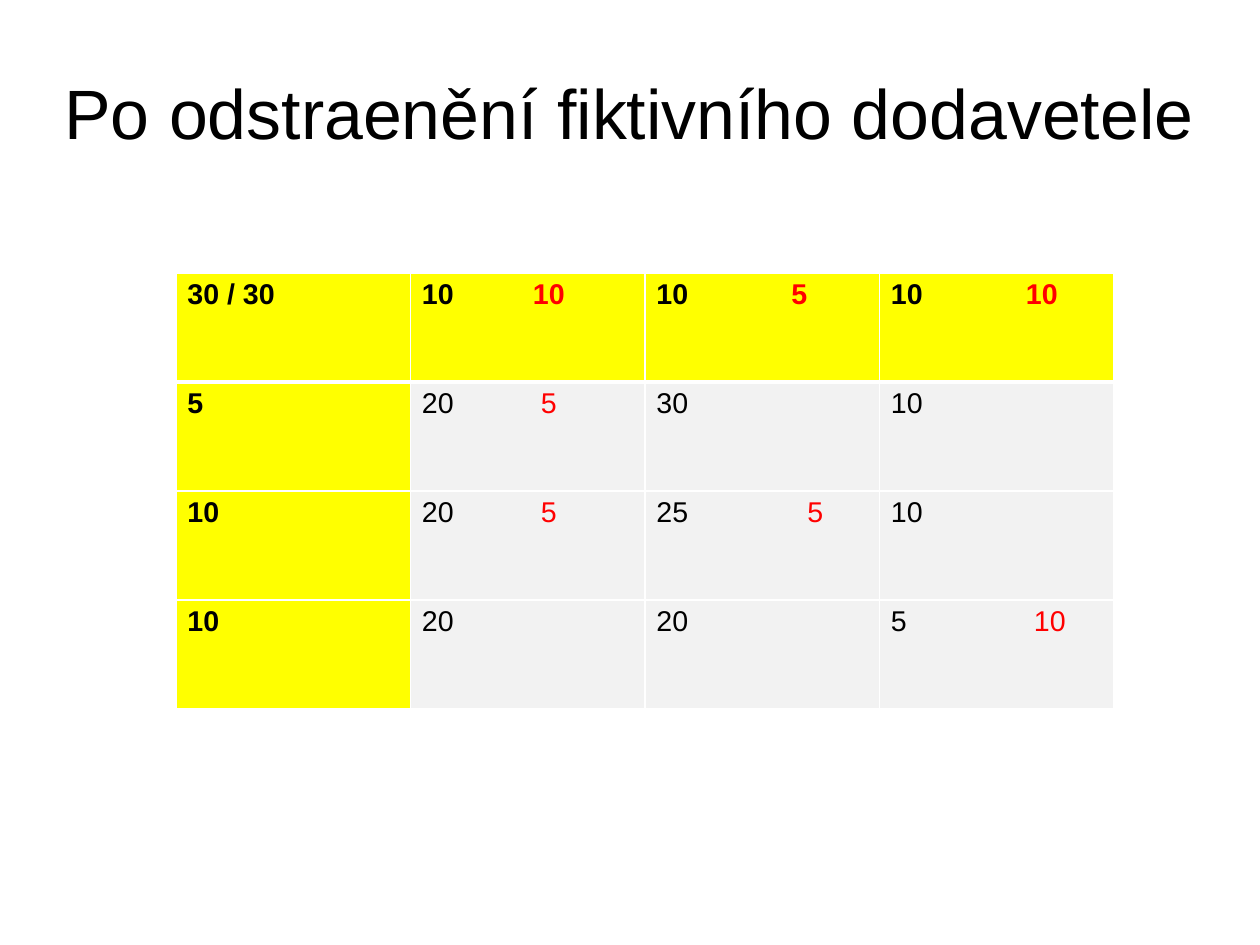
from lxml.etree import SubElement
from pptx import Presentation
from pptx.dml.color import RGBColor
from pptx.enum.text import MSO_ANCHOR, PP_ALIGN
from pptx.oxml.ns import qn
from pptx.util import Pt

PX = 8000
COLORS = {"black": "000000", "red": "FF0000", "yellow": "FFFF00",
          "gray": "F2F2F2", "white": "FFFFFF"}
ROWS = [
    [("30 / 30",), ("10", "10", 111), ("10", "5", 135), ("10", "10", 135)],
    [("5",), ("20", "5", 119), ("30",), ("10",)],
    [("10",), ("20", "5", 119), ("25", "5", 151), ("10",)],
    [("10",), ("20",), ("20",), ("5", "10", 143)],
]


def px(n):
    """Convert pixels to EMU."""
    return int(n * PX)


def add_text(p, text, size=18, color="black", bold=False):
    """Append a formatted run to a paragraph."""
    r = p.add_run()
    r.text = text
    r.font.name = "Arial"
    r.font.size = Pt(size)
    r.font.bold = bold
    r.font.color.rgb = RGBColor.from_string(COLORS[color])


def add_tab_stop(p, pos):
    """Set one left tab stop on a paragraph."""
    tabs = SubElement(p._p.get_or_add_pPr(), qn("a:tabLst"))
    SubElement(tabs, qn("a:tab"), pos=str(px(pos)), algn="l")


def add_borders(cell, top, bottom):
    """Give a cell white borders, widths in points."""
    tcPr = cell._tc.get_or_add_tcPr()
    for side, width in (("L", 1), ("R", 1), ("T", top), ("B", bottom)):
        ln = SubElement(tcPr, qn(f"a:ln{side}"), w=str(Pt(width)))
        fill = SubElement(ln, qn("a:solidFill"))
        SubElement(fill, qn("a:srgbClr"), val=COLORS["white"])


def add_title(slide, x, y, w, h):
    """Place the centred title in its box."""
    tf = slide.shapes.add_textbox(px(x), px(y), px(w), px(h)).text_frame
    tf.word_wrap = True
    tf.vertical_anchor = MSO_ANCHOR.MIDDLE
    tf.margin_left = tf.margin_right = tf.margin_top = tf.margin_bottom = 0
    p = tf.paragraphs[0]
    p.alignment = PP_ALIGN.CENTER
    p.line_spacing = 0.9
    add_text(p, "Po odstraenění fiktivního dodavetele", size=44)


def add_transport_table(slide, x, y, w, h):
    """Place the table of costs with shipped amounts in red."""
    table = slide.shapes.add_table(len(ROWS), len(ROWS[0]),
                                   px(x), px(y), px(w), px(h)).table
    table.horz_banding = False
    for i, row in enumerate(ROWS):
        for j, (value, *shipped) in enumerate(row):
            cell = table.cell(i, j)
            add_borders(cell, top=3 if i == 1 else 1, bottom=3 if i == 0 else 1)
            header = i == 0 or j == 0
            cell.fill.solid()
            cell.fill.fore_color.rgb = RGBColor.from_string(
                COLORS["yellow" if header else "gray"])
            p = cell.text_frame.paragraphs[0]
            add_text(p, value, bold=header)
            if shipped:
                amount, pos = shipped
                add_tab_stop(p, pos)
                add_text(p, f"\t{amount}", color="red", bold=header)


def main():
    """Build and save the slide."""
    prs = Presentation()
    prs.slide_width, prs.slide_height = px(1260), px(945)
    slide = prs.slides.add_slide(prs.slide_layouts[6])
    add_title(slide, 63, 38, 1134, 158)
    add_transport_table(slide, 176, 273, 938, 436)
    prs.save("out.pptx")


if __name__ == "__main__":
    main()
